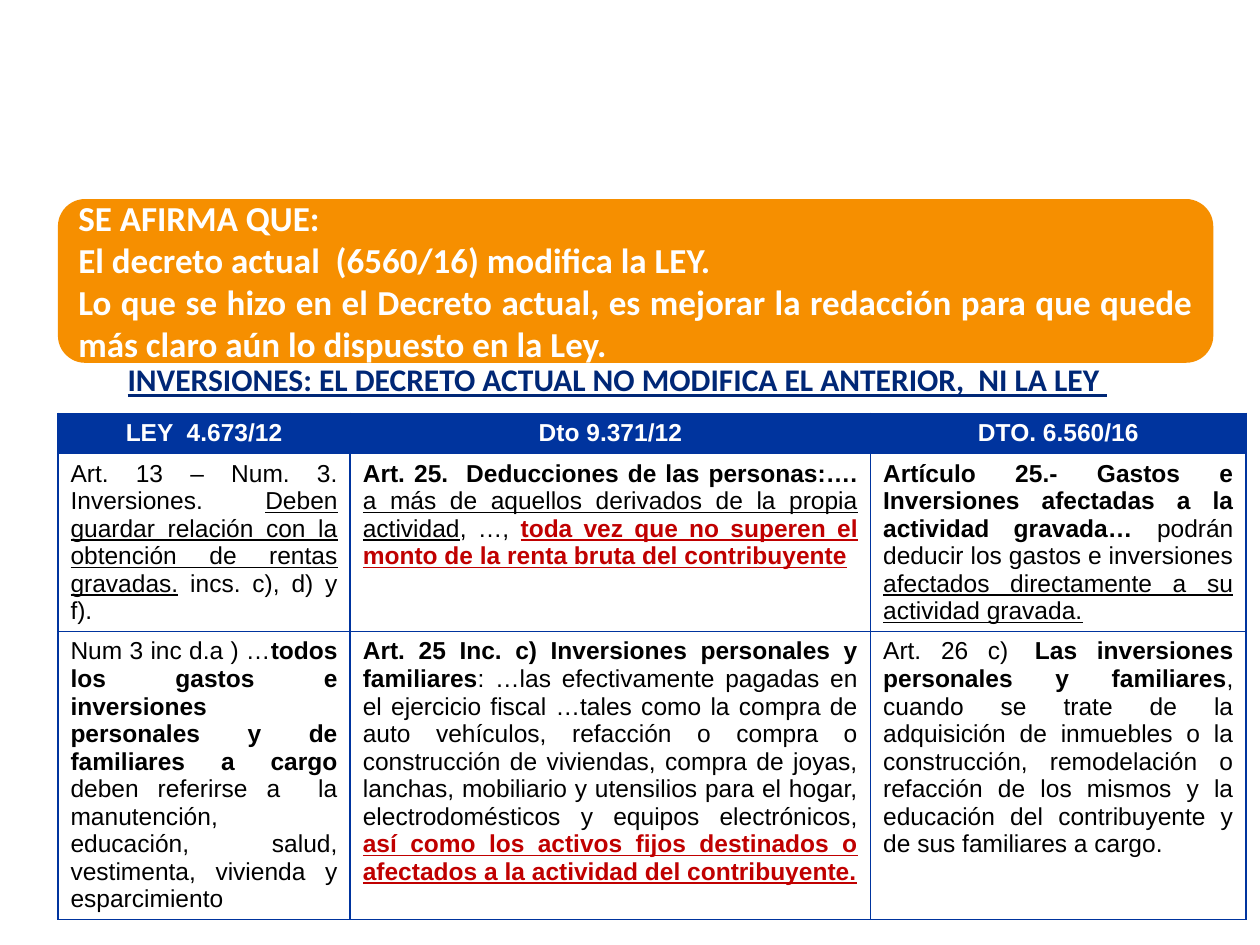
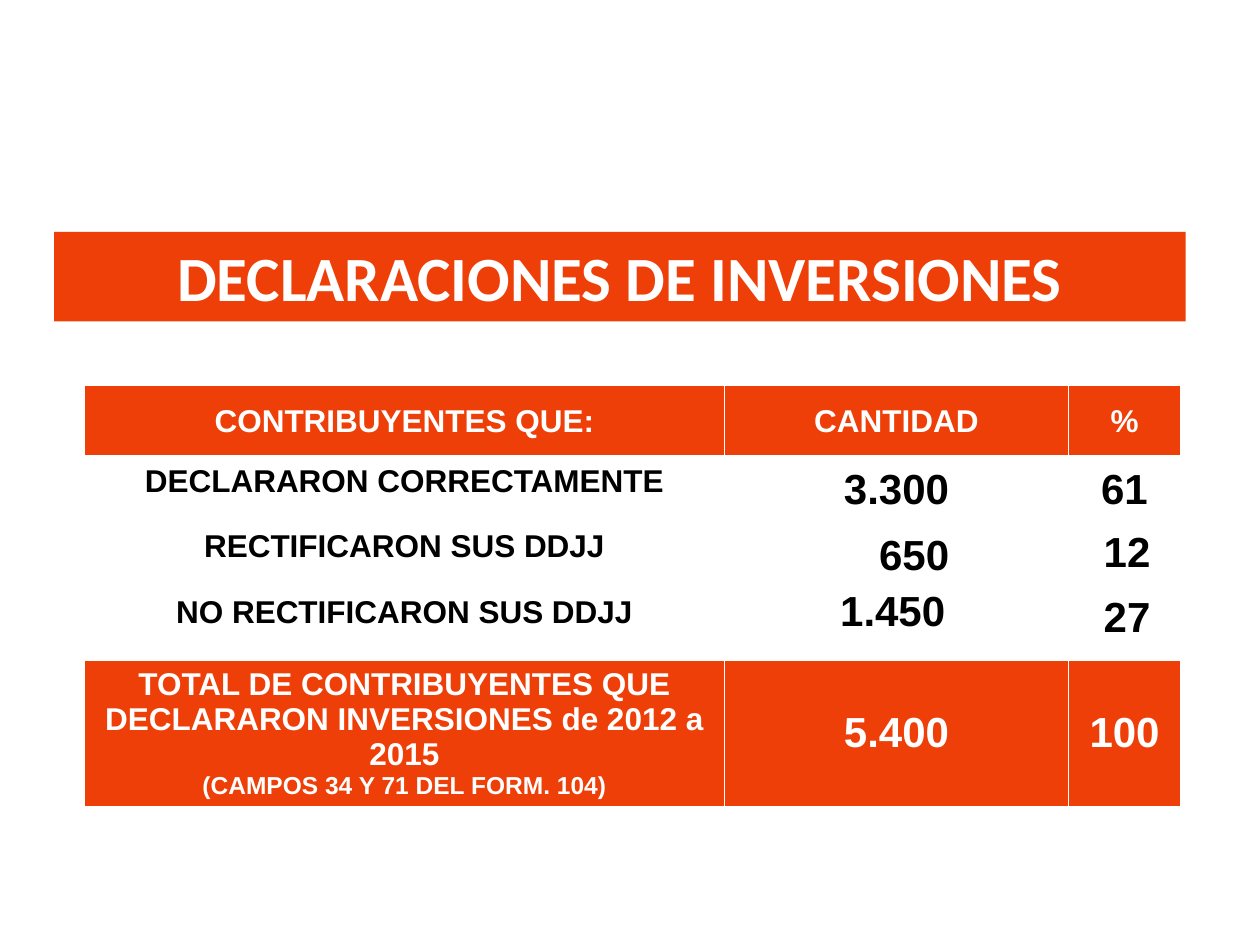
from lxml import etree
from pptx import Presentation
from pptx.dml.color import RGBColor
from pptx.enum.shapes import MSO_SHAPE
from pptx.enum.text import MSO_ANCHOR, MSO_AUTO_SIZE, PP_ALIGN
from pptx.oxml.ns import qn
from pptx.util import Inches, Pt

COLORS = {"navy": "002776", "blue": "00349E", "amber": "F68F00", "orange": "EE3F08",
          "red": "C00000", "white": "FFFFFF", "black": "000000"}

# Run styles used inside the legal texts
PLAIN = {}
BOLD = {"bold": True}
LINED = {"underline": True}
BOLD_LINED = {"bold": True, "underline": True}
RED = {"bold": True, "underline": True, "color": "red"}

LAW_HEAD = ["LEY  4.673/12", "Dto 9.371/12", "DTO. 6.560/16"]
LAW_ROWS = [
    [
        [("Art. 13 – Num. 3. Inversiones. ", PLAIN),
         ("Deben guardar relación con la obtención de rentas gravadas.", LINED),
         (" incs. c), d) y f).", PLAIN)],
        [("Art. 25.  Deducciones de las personas:….", BOLD), (" ", BOLD_LINED),
         ("a más de aquellos derivados de la propia actividad", LINED), (", …, ", PLAIN),
         ("toda vez que no superen el monto de la renta bruta del contribuyente", RED)],
        [("Artículo 25.- Gastos e Inversiones afectadas a la actividad gravada… ", BOLD),
         ("podrán deducir los gastos e inversiones ", PLAIN),
         ("afectados directamente a su actividad gravada.", LINED)],
    ],
    [
        [("Num 3 inc d.a ) …", PLAIN),
         ("todos los gastos e inversiones personales y de familiares a cargo", BOLD),
         (" deben referirse a  la manutención, educación, salud, vestimenta, "
          "vivienda y esparcimiento", PLAIN)],
        [("Art. 25 Inc. c) Inversiones personales y familiares", BOLD),
         (": …las efectivamente pagadas en el ejercicio fiscal …tales como la compra de "
          "auto vehículos, refacción o compra o construcción de viviendas, compra de joyas, "
          "lanchas, mobiliario y utensilios para el hogar, electrodomésticos y equipos "
          "electrónicos, ", PLAIN),
         ("así como los activos fijos destinados o afectados a la actividad del "
          "contribuyente.", RED)],
        [("Art. 26 c)\t", PLAIN), ("Las inversiones personales y familiares", BOLD),
         (", cuando se trate de la adquisición de inmuebles o la construcción, remodelación "
          "o refacción de los mismos y la educación del contribuyente y de sus familiares "
          "a cargo.", PLAIN)],
    ],
]

COUNT_HEAD = ["CONTRIBUYENTES QUE:", "CANTIDAD", "%"]
COUNT_ROWS = [["DECLARARON CORRECTAMENTE", "3.300", "61"],
              ["RECTIFICARON SUS DDJJ", "650", "12"],
              ["NO RECTIFICARON SUS DDJJ", "1.450", "27"]]
TOTAL_LABEL = "TOTAL DE CONTRIBUYENTES QUE DECLARARON INVERSIONES de 2012 a 2015"
TOTAL_NOTE = "(CAMPOS 34 Y 71 DEL FORM. 104)"
# Cells whose number is nudged: (row, column) -> margins in inches
NUDGED = {(2, 1): {"margin_left": 0.28, "margin_right": 0},
          (2, 2): {"margin_left": 0.28},
          (3, 1): {"margin_top": 0, "margin_right": 0.16, "margin_bottom": 0.2},
          (3, 2): {"margin_left": 0.28}}


def rgb(name):
    return RGBColor.from_string(COLORS[name])


def add_run(p, text, size, color="black", name="Arial", **fmt):
    r = p.add_run()
    r.text = text
    values = {"size": Pt(size), "name": name, "bold": False, **fmt}
    for key, value in values.items():
        setattr(r.font, key, value)
    r.font.color.rgb = rgb(color)


def place(sp, left, top, width, height):
    box = {"left": left, "top": top, "width": width, "height": height}
    for key, value in box.items():
        setattr(sp, key, Inches(value))


def fill(target, color):
    target.fill.solid()
    target.fill.fore_color.rgb = rgb(color)


def set_border(cell, color, bottom=1):
    tcPr = cell._tc.get_or_add_tcPr()
    for side, width in zip("LRTB", (1, 1, 1, bottom)):
        ln = etree.SubElement(tcPr, qn(f"a:ln{side}"), w=str(Pt(width)))
        solid = etree.SubElement(ln, qn("a:solidFill"))
        etree.SubElement(solid, qn("a:srgbClr"), val=COLORS[color])


def add_grid(s, left, top, widths, heights):
    frame = s.shapes.add_table(len(heights), len(widths), Inches(left), Inches(top),
                               Inches(sum(widths)), Inches(sum(heights)))
    table = frame.table
    table.horz_banding = False
    for col, width in zip(table.columns, widths):
        col.width = Inches(width)
    for row, height in zip(table.rows, heights):
        row.height = Inches(height)
    return table


def style_cell(cell, border, color, align, anchor=MSO_ANCHOR.TOP, bottom=1):
    """Format the cell and return its first paragraph."""
    set_border(cell, border, bottom)
    fill(cell, color)
    cell.vertical_anchor = anchor
    p = cell.text_frame.paragraphs[0]
    p.alignment = align
    return p


def add_banner(s, lines):
    sp = s.shapes.add_shape(MSO_SHAPE.ROUNDED_RECTANGLE, Inches(0.46), Inches(1.58),
                            Inches(9.17), Inches(1.3))
    sp.shadow.inherit = False
    fill(sp, "amber")
    sp.line.fill.background()
    tf = sp.text_frame
    tf.word_wrap = True
    tf.vertical_anchor = MSO_ANCHOR.MIDDLE
    for i, line in enumerate(lines):
        p = tf.add_paragraph() if i else tf.paragraphs[0]
        p.alignment = PP_ALIGN.JUSTIFY
        add_run(p, line, 20, "white", "Calibri", bold=True)


def add_subtitle(sp, text):
    place(sp, 0.49, 2.81, 8.82, 0.71)
    sp.text_frame.auto_size = MSO_AUTO_SIZE.NONE
    p = sp.text_frame.paragraphs[0]
    pPr = p._p.get_or_add_pPr()
    pPr.set("marL", "0")
    pPr.set("indent", "0")
    etree.SubElement(pPr, qn("a:buNone"))
    p.alignment = PP_ALIGN.CENTER
    p.space_before = Pt(0)
    add_run(p, text, 18, "navy", "Calibri", bold=True, underline=True)


def add_title(sp, text):
    place(sp, 0.43, 1.84, 8.98, 0.71)
    fill(sp, "orange")
    tf = sp.text_frame
    tf.auto_size = MSO_AUTO_SIZE.NONE
    tf.vertical_anchor = MSO_ANCHOR.MIDDLE
    p = tf.paragraphs[0]
    p.alignment = PP_ALIGN.CENTER
    add_run(p, text, 36, "white", "Calibri", bold=True)


def add_law_table(s):
    table = add_grid(s, 0.46, 3.28, [2.32, 4.13, 2.98], [0.32, 1.41, 2.28])
    for c, text in enumerate(LAW_HEAD):
        p = style_cell(table.cell(0, c), "blue", "blue", PP_ALIGN.CENTER)
        add_run(p, text, 14, "white", bold=True)
    for r, row in enumerate(LAW_ROWS, 1):
        for c, runs in enumerate(row):
            p = style_cell(table.cell(r, c), "blue", "white", PP_ALIGN.JUSTIFY)
            for text, style in runs:
                add_run(p, text, 14, **style)


def add_count_table(s):
    table = add_grid(s, 0.67, 3.06, [5.08, 2.73, 0.89], [0.57, 0.52, 0.52, 0.56, 1.14])
    rows = [COUNT_HEAD, *COUNT_ROWS, [TOTAL_LABEL, "5.400", "100"]]
    last = len(rows) - 1
    for r, row in enumerate(rows):
        strong = r in (0, last)
        back, ink = ("orange", "white") if strong else ("white", "black")
        for c, text in enumerate(row):
            cell = table.cell(r, c)
            low_percent = c == 2 and r in (2, 3)
            top = low_percent or (c == 0 and r > 0)
            p = style_cell(cell, "white", back,
                           PP_ALIGN.LEFT if low_percent else PP_ALIGN.CENTER,
                           MSO_ANCHOR.TOP if top else MSO_ANCHOR.MIDDLE,
                           bottom=1 if r else 3)
            add_run(p, text, 24 if r and c else 18, ink, bold=True)
            for key, value in NUDGED.get((r, c), {}).items():
                setattr(cell, key, Inches(value))
    p = table.cell(last, 0).text_frame.add_paragraph()
    p.alignment = PP_ALIGN.CENTER
    add_run(p, TOTAL_NOTE, 14, "white", bold=True)


def main():
    prs = Presentation()
    prs.slide_width, prs.slide_height = Inches(10), Inches(7.5)

    # Slide 1: law and decrees side by side
    s = prs.slides.add_slide(prs.slide_layouts[1])
    title = s.shapes.title._element
    title.getparent().remove(title)
    add_subtitle(s.placeholders[1],
                 "INVERSIONES: EL DECRETO ACTUAL NO MODIFICA EL ANTERIOR,  NI LA LEY ")
    add_law_table(s)
    add_banner(s, ["SE AFIRMA QUE:",
                   "El decreto actual  (6560/16) modifica la LEY.",
                   "Lo que se hizo en el Decreto actual, es mejorar la redacción para que "
                   "quede más claro aún lo dispuesto en la Ley."])

    # Slide 2: investment declarations
    s = prs.slides.add_slide(prs.slide_layouts[5])
    add_title(s.shapes.title, "DECLARACIONES DE INVERSIONES")
    add_count_table(s)

    prs.save("out.pptx")


if __name__ == "__main__":
    main()
